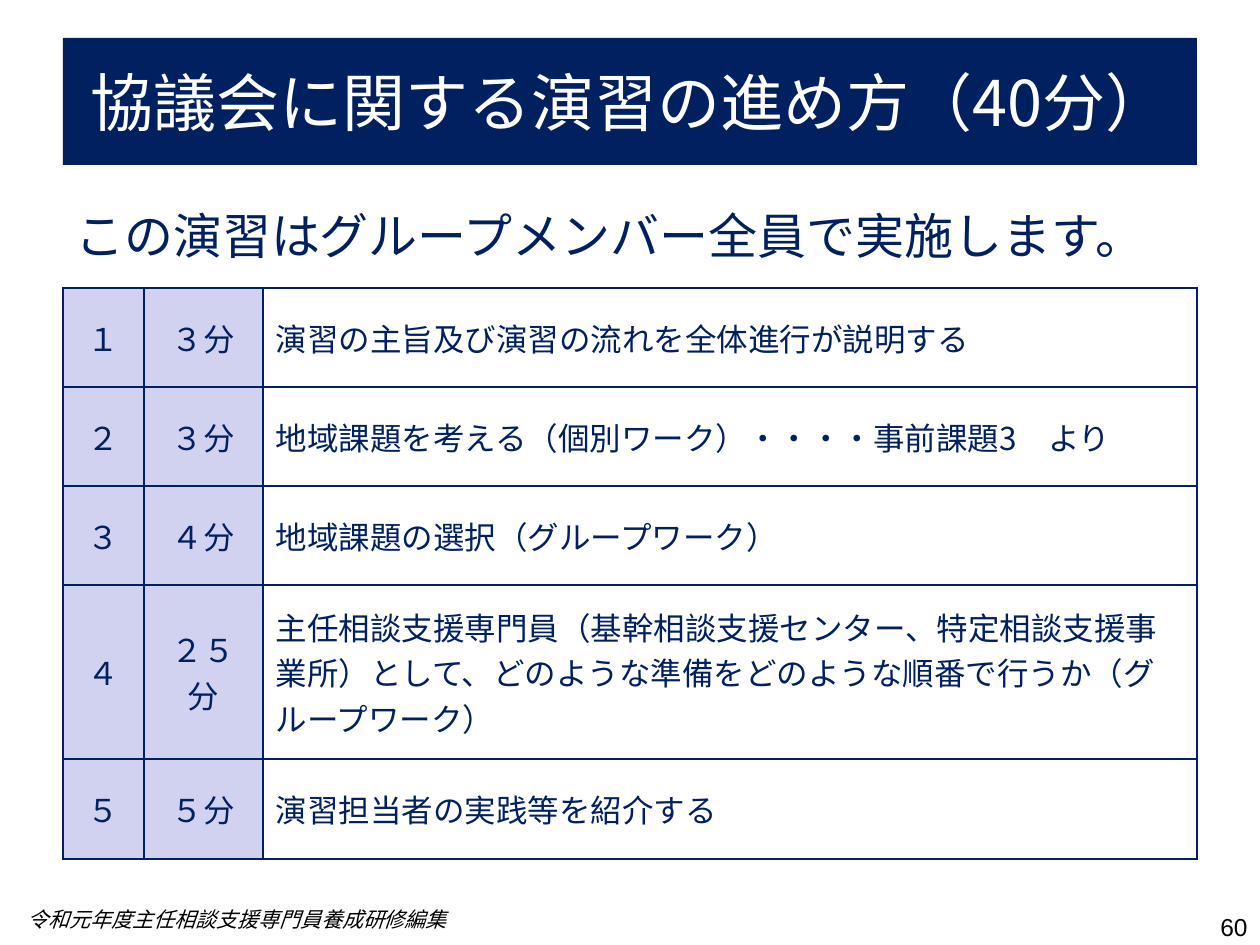
import pptx
import pptx.dml.color
import pptx.enum.shapes
import pptx.enum.text
import pptx.oxml.ns
import pptx.util
from dataclasses import dataclass
from lxml import etree

PX = 914400 / 126
ALIGN = pptx.enum.text.PP_ALIGN
MID = pptx.enum.text.MSO_ANCHOR.MIDDLE


@dataclass
class Theme:
    navy: str = "002060"
    pale: str = "D1D1F0"
    white: str = "FFFFFF"
    black: str = "000000"
    sans: str = "Noto Sans CJK JP"
    arial: str = "Arial"
    head: int = 36
    lead: int = 28
    cell: int = 18
    page: int = 14
    note: int = 12
    rule: int = 1


def px(n):
    return pptx.util.Emu(round(n * PX))


def rgb(code):
    return pptx.dml.color.RGBColor.from_string(code)


def sub(node, tag, **attrs):
    return etree.SubElement(node, pptx.oxml.ns.qn(tag), attrs)


class Deck:
    def __init__(self, theme):
        self.theme = theme
        self.file = pptx.Presentation()
        self.file.slide_width = px(1260)
        self.file.slide_height = px(945)
        self.slide = self.file.slides.add_slide(self.file.slide_layouts[6])

    def label(self, frame, text, size, color, align=ALIGN.LEFT, face=None, slant=None):
        """Set the one styled paragraph of a text frame."""
        face = face or self.theme.sans
        frame.word_wrap = True
        para = frame.paragraphs[0]
        para.text = text
        para.alignment = align
        font = para.font
        font.size = pptx.util.Pt(size)
        font.name = face
        font.italic = slant
        font.color.rgb = rgb(color)
        # East Asian text takes its face from a:ea, not a:latin
        sub(para.runs[0]._r.get_or_add_rPr(), "a:ea", typeface=face)

    def text(self, box, text, size, color, **look):
        shape = self.slide.shapes.add_textbox(*map(px, box))
        self.label(shape.text_frame, text, size, color, **look)

    def band(self, box, text):
        kind = pptx.enum.shapes.MSO_SHAPE.RECTANGLE
        shape = self.slide.shapes.add_shape(kind, *map(px, box))
        shape.shadow.inherit = False
        shape.fill.solid()
        shape.fill.fore_color.rgb = rgb(self.theme.navy)
        shape.line.fill.background()
        shape.text_frame.vertical_anchor = MID
        self.label(shape.text_frame, text, self.theme.head, self.theme.white, ALIGN.CENTER)

    def edge(self, cell):
        """Rule all four sides of a cell."""
        props = cell._tc.get_or_add_tcPr()
        width = str(pptx.util.Pt(self.theme.rule))
        for side in "LRTB":
            line = sub(props, "a:ln" + side, w=width)
            sub(sub(line, "a:solidFill"), "a:srgbClr", val=self.theme.navy)

    def table(self, left, top, wides, talls, rows):
        """Draw the rows; all columns but the last are tinted and centred."""
        box = left, top, sum(wides), sum(talls)
        grid = self.slide.shapes.add_table(len(rows), len(wides), *map(px, box)).table
        grid.first_row = grid.horz_banding = False
        for col, wide in zip(grid.columns, wides):
            col.width = px(wide)
        for line, tall, texts in zip(grid.rows, talls, rows):
            line.height = px(tall)
            for i, (cell, text) in enumerate(zip(line.cells, texts)):
                last = i == len(wides) - 1
                self.edge(cell)
                if last:
                    cell.fill.background()
                else:
                    cell.fill.solid()
                    cell.fill.fore_color.rgb = rgb(self.theme.pale)
                cell.vertical_anchor = MID
                self.label(cell.text_frame, text, self.theme.cell, self.theme.navy,
                           ALIGN.LEFT if last else ALIGN.CENTER)


STEPS = [
    ("１", "３分", "演習の主旨及び演習の流れを全体進行が説明する"),
    ("２", "３分", "地域課題を考える（個別ワーク）・・・・事前課題3　より"),
    ("３", "４分", "地域課題の選択（グループワーク）"),
    ("４", "２５分", "主任相談支援専門員（基幹相談支援センター、特定相談支援事業所）"
     "として、どのような準備をどのような順番で行うか（グループワーク）"),
    ("５", "５分", "演習担当者の実践等を紹介する"),
]


def main():
    theme = Theme()
    deck = Deck(theme)
    deck.band((63, 38, 1134, 127), "協議会に関する演習の進め方（40分）")
    deck.text((15, 900, 496, 38), "令和元年度主任相談支援専門員養成研修編集",
              theme.note, theme.black, slant=True)
    deck.table(63, 288, (81, 119, 934), (99, 99, 99, 174, 100), STEPS)
    deck.text((63, 199, 1134, 72), "この演習はグループメンバー全員で実施します。",
              theme.lead, theme.navy)
    deck.text((966, 906, 294, 37), "60", theme.page, theme.black,
              align=ALIGN.RIGHT, face=theme.arial)
    deck.file.save("out.pptx")


if __name__ == "__main__":
    main()
